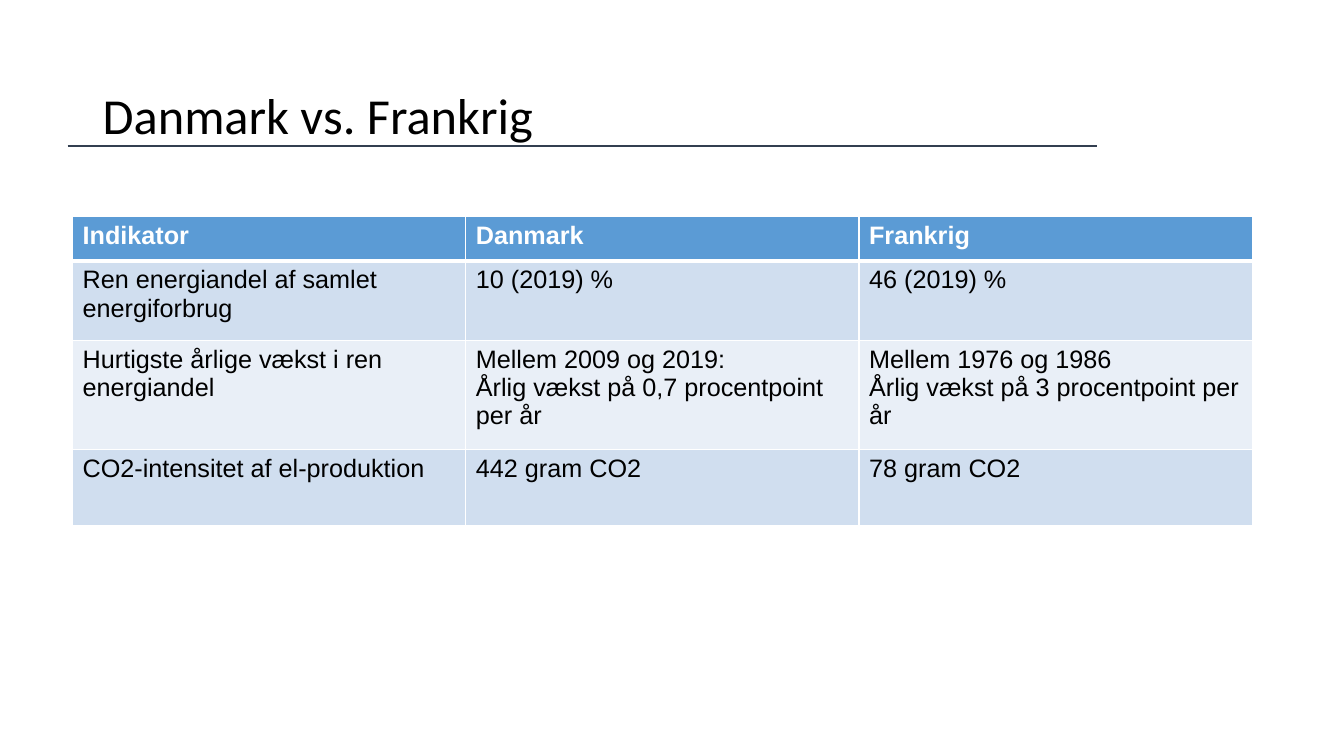
from lxml import etree
from pptx import Presentation
from pptx.dml.color import RGBColor
from pptx.enum.shapes import MSO_CONNECTOR
from pptx.enum.text import MSO_ANCHOR
from pptx.oxml.ns import qn
from pptx.util import Emu, Pt

STRAIGHT = MSO_CONNECTOR.STRAIGHT
MIDDLE = MSO_ANCHOR.MIDDLE
EMU_PER_PX = 9144
COLORS = {
    "text": "000000",
    "white": "FFFFFF",
    "rule": "333F50",
    "header": "5B9BD5",
    "odd_row": "D0DEEF",
    "even_row": "E9EFF7",
}
ROWS = [
    ["Indikator", "Danmark", "Frankrig"],
    ["Ren energiandel af samlet energiforbrug", "10 (2019) %", "46 (2019) %"],
    [
        "Hurtigste årlige vækst i ren energiandel",
        "Mellem 2009 og 2019:\nÅrlig vækst på 0,7 procentpoint per år",
        "Mellem 1976 og 1986\nÅrlig vækst på 3 procentpoint per år",
    ],
    ["CO2-intensitet af el-produktion", "442 gram CO2", "78 gram CO2"],
]
ROW_HEIGHTS = [44, 79, 108, 75]
COLUMN_WIDTH = 390


def px(length):
    return Emu(length * EMU_PER_PX)


def color(name):
    return RGBColor.from_string(COLORS[name])


class SlideBuilder:
    def __init__(self, slide, title_font, body_font):
        self.slide = slide
        self.title_font = title_font
        self.body_font = body_font

    def add_text(self, paragraph, text, font, size, color_name, bold=False):
        for index, line in enumerate(text.split("\n")):
            if index:
                paragraph.add_line_break()
            run = paragraph.add_run()
            run.text = line
            run.font.name = font
            run.font.size = Pt(size)
            run.font.bold = bold
            run.font.color.rgb = color(color_name)

    def rule(self, left, right, y):
        connector = self.slide.shapes.add_connector(
            STRAIGHT, px(left), px(y), px(right), px(y))
        connector.line.color.rgb = color("rule")
        connector.line.width = Pt(1.5)
        etree.SubElement(connector._element.spPr, qn("a:effectLst"))

    def title(self, text, left, top, width, height):
        box = self.slide.shapes.add_textbox(px(left), px(top), px(width), px(height))
        frame = box.text_frame
        frame.word_wrap = True
        frame.vertical_anchor = MIDDLE
        paragraph = frame.paragraphs[0]
        paragraph.line_spacing = 0.9
        self.add_text(paragraph, text, self.title_font, 36, "text")

    def border(self, cell, side, points):
        properties = cell._tc.get_or_add_tcPr()
        line = etree.SubElement(properties, qn(f"a:ln{side}"), w=str(Pt(points)))
        fill = etree.SubElement(line, qn("a:solidFill"))
        etree.SubElement(fill, qn("a:srgbClr"), val=COLORS["white"])

    def cell(self, cell, text, row):
        header = row == 0
        widths = {"L": 1, "R": 1, "T": 3 if row == 1 else 1, "B": 3 if header else 1}
        for side, points in widths.items():
            self.border(cell, side, points)
        cell.fill.solid()
        banding = "odd_row" if row % 2 else "even_row"
        cell.fill.fore_color.rgb = color("header" if header else banding)
        self.add_text(cell.text_frame.paragraphs[0], text, self.body_font, 18,
                      "white" if header else "text", header)

    def table(self, rows, left, top, column_width, row_heights):
        columns = len(rows[0])
        table = self.slide.shapes.add_table(
            len(rows), columns, px(left), px(top),
            px(columns * column_width), px(sum(row_heights))).table
        for column in table.columns:
            column.width = px(column_width)
        for row, texts in enumerate(rows):
            table.rows[row].height = px(row_heights[row])
            for column, text in enumerate(texts):
                self.cell(table.cell(row, column), text, row)


def main():
    presentation = Presentation()
    presentation.slide_width = px(1333)
    presentation.slide_height = px(750)
    slide = presentation.slides.add_slide(presentation.slide_layouts[6])
    builder = SlideBuilder(slide, "Calibri", "Arial")
    builder.rule(67, 1088, 145)
    builder.title("Danmark vs. Frankrig", 92, 45, 1150, 145)
    builder.table(ROWS, 72, 215, COLUMN_WIDTH, ROW_HEIGHTS)
    presentation.save("out.pptx")


if __name__ == "__main__":
    main()
